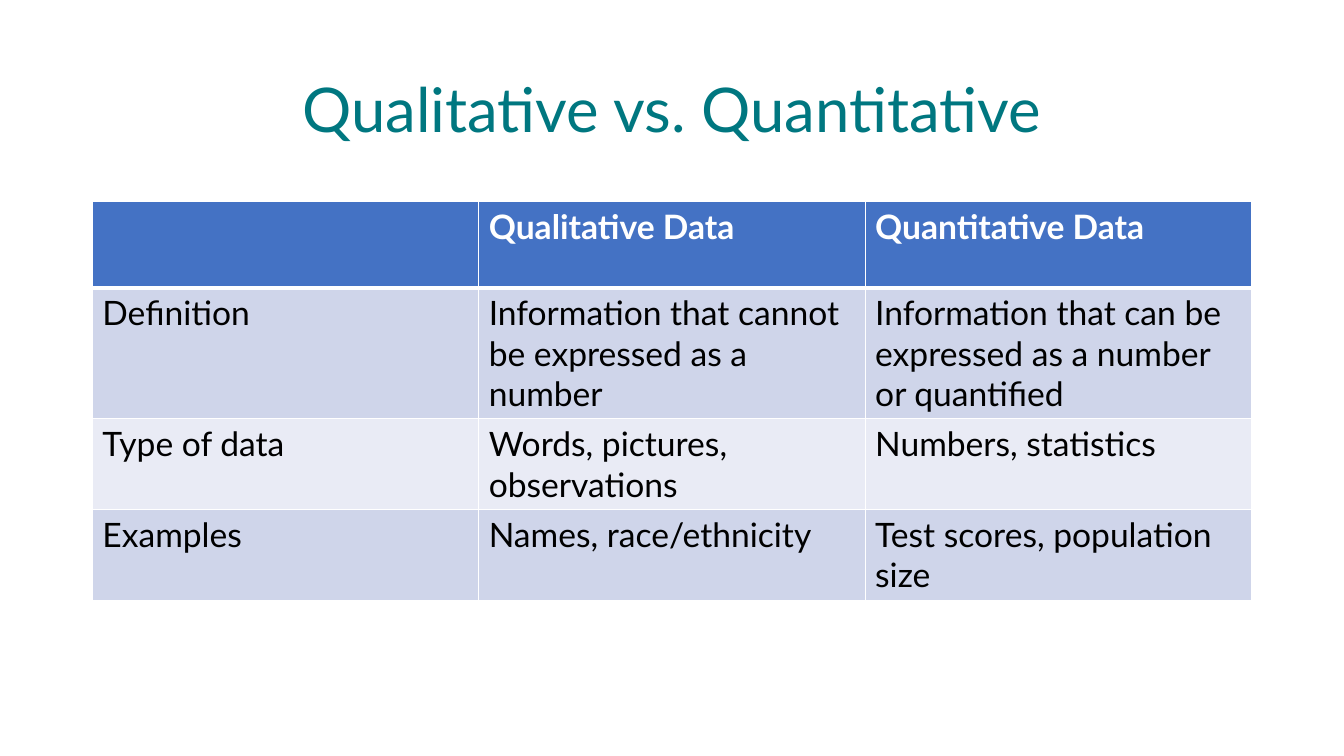
from dataclasses import dataclass

from lxml import etree
from pptx import Presentation
from pptx.dml.color import RGBColor
from pptx.enum.text import MSO_ANCHOR, PP_ALIGN
from pptx.oxml.ns import qn
from pptx.util import Pt

CENTER, LEFT = PP_ALIGN.CENTER, PP_ALIGN.LEFT
MIDDLE = MSO_ANCHOR.MIDDLE
PX = 9525  # EMU per px, 96 px to the inch


@dataclass(frozen=True)
class Theme:
    font: str = "Lato"
    title: str = "007780"
    header: str = "4472C4"
    bands: tuple = ("CFD5EA", "E9EBF5")
    light: str = "FFFFFF"
    dark: str = "000000"
    title_size: int = 44
    table_size: int = 24
    thin: int = 1
    thick: int = 3


THEME = Theme()
TITLE_BOX = (88, 38, 1104, 139)
TABLE_BOX = (88, 192, 1104, 328)
ROWS = [
    ["", "Qualitative Data", "Quantitative Data"],
    ["Definition", "Information that cannot be expressed as a number",
     "Information that can be expressed as a number or quantified"],
    ["Type of data", "Words, pictures, observations", "Numbers, statistics"],
    ["Examples", "Names, race/ethnicity", "Test scores, population size"],
]


def emu(box):
    return [length * PX for length in box]


def write(para, text, align, size, color, bold=False):
    para.alignment = align
    span = para.add_run()
    span.text = text
    span.font.color.rgb = RGBColor.from_string(color)
    formats = {"name": THEME.font, "size": Pt(size), "bold": bold}
    for name, value in formats.items():
        setattr(span.font, name, value)


def add_title(page, box, text):
    frame = page.shapes.add_textbox(*emu(box)).text_frame
    frame.word_wrap = True
    frame.vertical_anchor = MIDDLE
    para = frame.paragraphs[0]
    para.line_spacing = 0.9
    write(para, text, CENTER, THEME.title_size, THEME.title)


def add_borders(cell, widths):
    properties = cell._tc.get_or_add_tcPr()
    for side, width in widths.items():
        line = etree.SubElement(properties, qn(f"a:ln{side}"), w=str(Pt(width)))
        fill = etree.SubElement(line, qn("a:solidFill"))
        etree.SubElement(fill, qn("a:srgbClr"), val=THEME.light)


def add_comparison(page, box, rows):
    table = page.shapes.add_table(len(rows), len(rows[0]), *emu(box)).table
    table.horz_banding = False
    for row_index, texts in enumerate(rows):
        is_header = row_index == 0
        fill = THEME.header if is_header else THEME.bands[(row_index - 1) % 2]
        color = THEME.light if is_header else THEME.dark
        # The rule under the header is thicker than the rest of the grid
        widths = {
            "L": THEME.thin,
            "R": THEME.thin,
            "T": THEME.thick if row_index == 1 else THEME.thin,
            "B": THEME.thick if is_header else THEME.thin,
        }
        for column_index, text in enumerate(texts):
            cell = table.cell(row_index, column_index)
            add_borders(cell, widths)
            cell.fill.solid()
            cell.fill.fore_color.rgb = RGBColor.from_string(fill)
            if text:
                write(cell.text_frame.paragraphs[0], text, LEFT,
                      THEME.table_size, color, is_header)


def main():
    deck = Presentation()
    deck.slide_width, deck.slide_height = emu((1280, 720))
    page = deck.slides.add_slide(deck.slide_layouts[6])

    # Heading
    add_title(page, TITLE_BOX, "Qualitative vs. Quantitative")

    # Comparison table
    add_comparison(page, TABLE_BOX, ROWS)

    deck.save("out.pptx")


if __name__ == "__main__":
    main()
